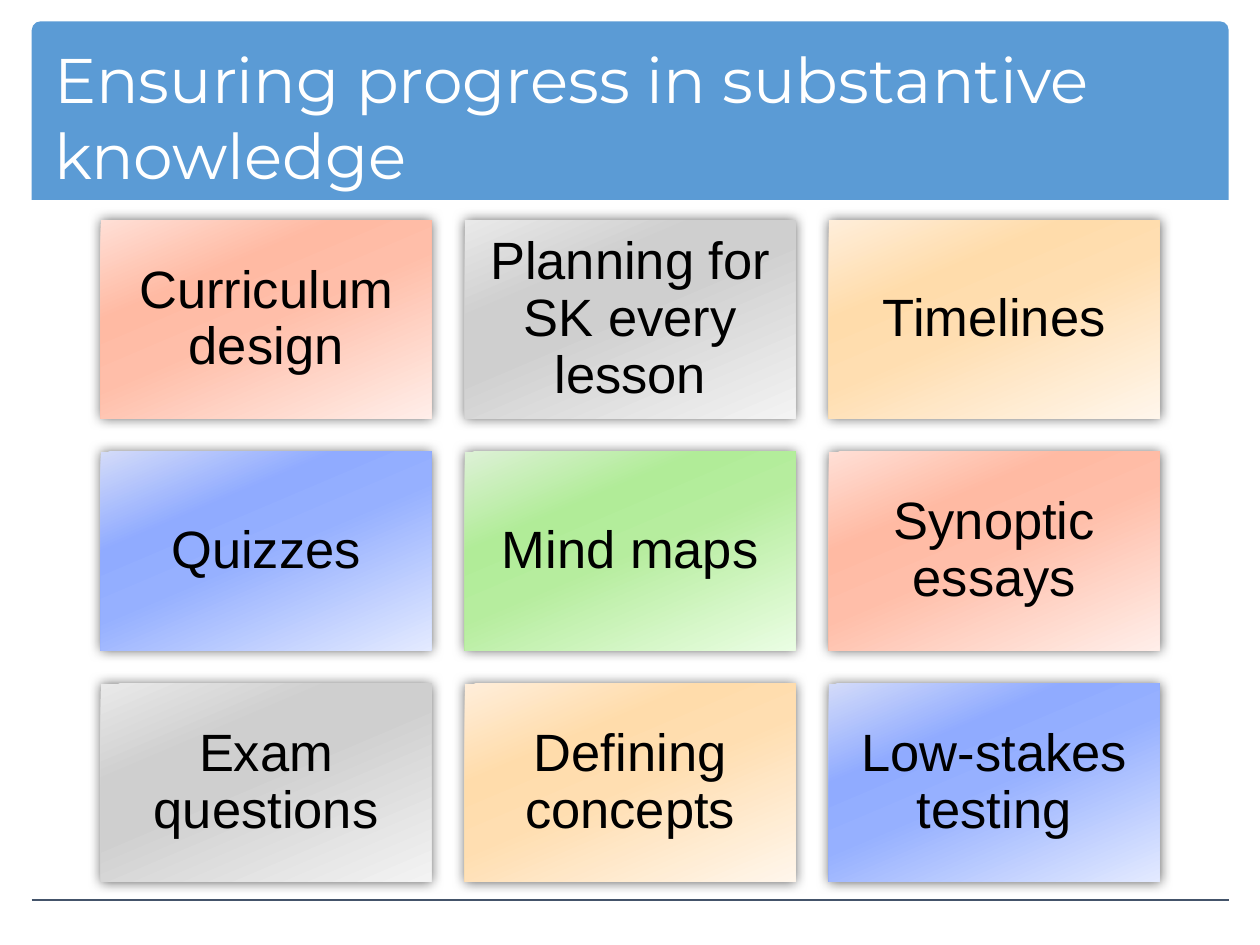
from dataclasses import dataclass

from lxml.etree import SubElement
from pptx import Presentation
from pptx.dml.color import RGBColor
from pptx.enum.shapes import MSO_CONNECTOR, MSO_SHAPE
from pptx.enum.text import MSO_ANCHOR, PP_ALIGN
from pptx.oxml.ns import qn
from pptx.util import Cm, Pt


@dataclass(frozen=True)
class Theme:
    banner: str = "5B9BD5"
    rule: str = "44546A"
    title_color: str = "FFFFFF"
    card_color: str = "000000"
    shadow: str = "000000"
    title_font: str = "Montserrat"
    card_font: str = "Arial"
    title_size: int = 36
    card_size: int = 30
    coral: tuple = ("FFDFD6", "FFBAA3", "FFBEA9", "FFEEE9")
    grey: tuple = ("E9E9E9", "CFCFCF", "D2D2D2", "F3F3F3")
    amber: tuple = ("FFEEDA", "FFDCAB", "FFDEB1", "FFF6EB")
    blue: tuple = ("D3DBF9", "90ABFF", "96B0FF", "E3EAFF")
    green: tuple = ("DDF1D6", "B1EC98", "B6ED9E", "EAFDE3")


def write(frame, text, *, font, size, color, align=PP_ALIGN.LEFT, spacing=1.0, inset=None):
    frame.word_wrap = True
    frame.vertical_anchor = MSO_ANCHOR.MIDDLE
    if inset is not None:
        frame.margin_left = frame.margin_right = inset
        frame.margin_top = frame.margin_bottom = inset
    paragraph = frame.paragraphs[0]
    paragraph.alignment = align
    paragraph.line_spacing = spacing
    run = paragraph.add_run()
    run.text = text
    run.font.name = font
    run.font.size = Pt(size)
    run.font.color.rgb = RGBColor.from_string(color)


class SlideBuilder:
    """Draws the elements of one slide in a shared style."""

    def __init__(self, slide, theme):
        self.shapes = slide.shapes
        self.theme = theme

    def banner(self, left, top, width, height):
        banner = self.shapes.add_shape(
            MSO_SHAPE.ROUND_2_SAME_RECTANGLE, left, top, width, height)
        banner.adjustments[0] = 0.05
        banner.adjustments[1] = 0
        banner.shadow.inherit = False
        banner.fill.solid()
        banner.fill.fore_color.rgb = RGBColor.from_string(self.theme.banner)
        banner.line.fill.background()

    def rule(self, left, right, y):
        rule = self.shapes.add_connector(MSO_CONNECTOR.STRAIGHT, left, y, right, y)
        rule.line.width = Pt(1)
        rule.line.color.rgb = RGBColor.from_string(self.theme.rule)
        SubElement(rule._element.spPr, qn("a:effectLst"))

    def title(self, text, left, top, width, height):
        title = self.shapes.add_textbox(left, top, width, height)
        write(title.text_frame, text, font=self.theme.title_font,
              size=self.theme.title_size, color=self.theme.title_color)

    def card(self, text, tint, left, top, width, height):
        card = self.shapes.add_shape(MSO_SHAPE.RECTANGLE, left, top, width, height)
        card.line.fill.background()
        self._shade(card, tint)
        self._glow(card)
        write(card.text_frame, text, font=self.theme.card_font,
              size=self.theme.card_size, color=self.theme.card_color,
              align=PP_ALIGN.CENTER, spacing=0.9, inset=Cm(0.3))

    def _shade(self, card, tint):
        card.fill.gradient()
        card.fill.gradient_angle = 360 - 67
        stops = card._element.spPr.find(".//" + qn("a:gsLst"))
        for stop in list(stops):
            stops.remove(stop)
        for percent, color in zip((0, 30, 50, 100), tint):
            stop = SubElement(stops, qn("a:gs"), pos=str(percent * 1000))
            SubElement(stop, qn("a:srgbClr"), val=color)

    def _glow(self, card):
        card.shadow.inherit = False
        effects = card._element.spPr.find(qn("a:effectLst"))
        shadow = SubElement(effects, qn("a:outerShdw"), blurRad=str(Pt(7.1)),
                            dist="0", dir="0", rotWithShape="0")
        color = SubElement(shadow, qn("a:srgbClr"), val=self.theme.shadow)
        SubElement(color, qn("a:alpha"), val="60000")


def main():
    deck = Presentation()
    deck.slide_width, deck.slide_height = Cm(25.4), Cm(19.05)
    theme = Theme()
    builder = SlideBuilder(deck.slides.add_slide(deck.slide_layouts[6]), theme)

    builder.banner(Cm(0.64), Cm(0.43), Cm(24.13), Cm(3.6))
    builder.rule(Cm(0.64), Cm(24.77), Cm(18.14))
    builder.title("Ensuring progress in substantive knowledge",
                  Cm(0.84), Cm(0.76), Cm(23.06), Cm(3.18))

    strategies = (
        ("Curriculum design", theme.coral),
        ("Planning for SK every lesson", theme.grey),
        ("Timelines", theme.amber),
        ("Quizzes", theme.blue),
        ("Mind maps", theme.green),
        ("Synoptic essays", theme.coral),
        ("Exam questions", theme.grey),
        ("Defining concepts", theme.amber),
        ("Low-stakes testing", theme.blue),
    )
    width, height, gap = 6.67, 4.0, 0.67
    for index, (strategy, tint) in enumerate(strategies):
        row, column = divmod(index, 3)
        builder.card(strategy, tint,
                     Cm(2.03 + column * (width + gap)),
                     Cm(4.44 + row * (height + gap)),
                     Cm(width), Cm(height))

    deck.save("out.pptx")


if __name__ == "__main__":
    main()
